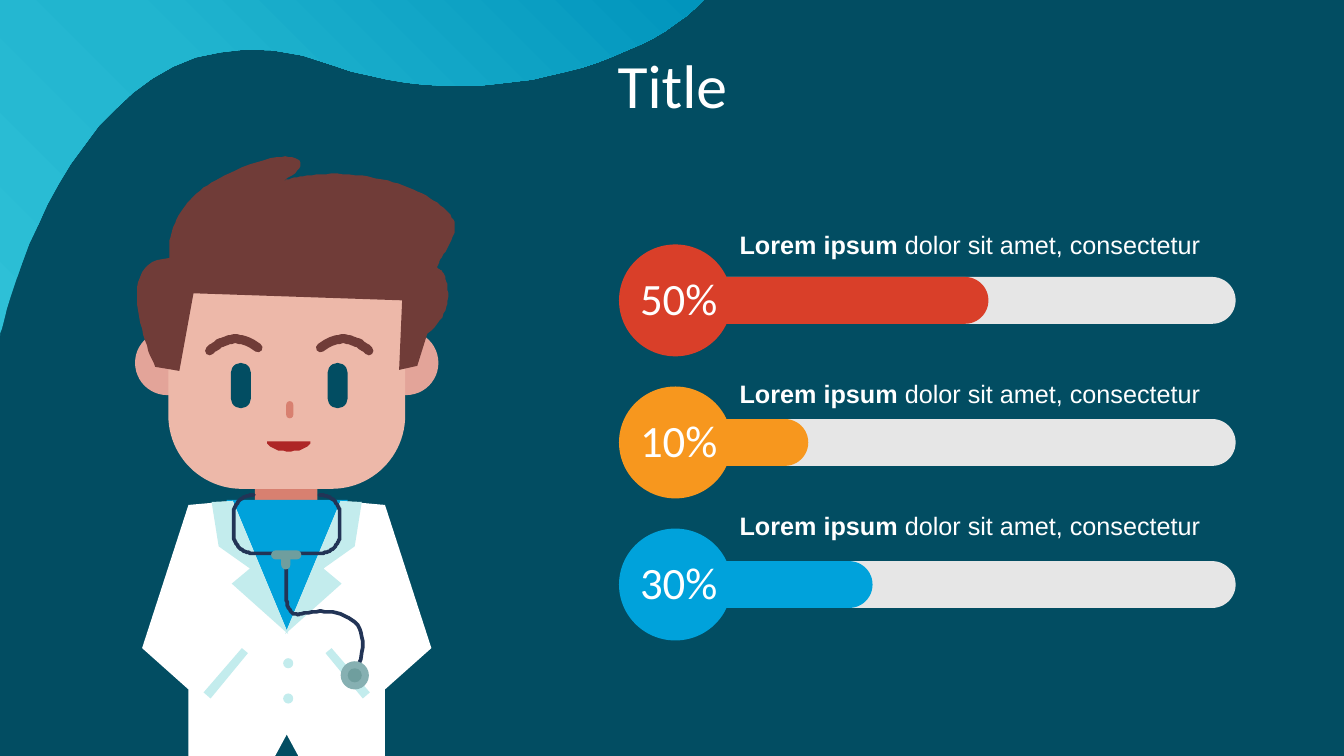
"""Build a slide with a doctor illustration beside three labelled progress bars."""
import copy
import dataclasses

import pptx
import pptx.dml.color
import pptx.enum.shapes
import pptx.enum.text
import pptx.oxml.ns
import pptx.util

Cm = pptx.util.Cm
Pt = pptx.util.Pt
Rgb = pptx.dml.color.RGBColor.from_string
Preset = pptx.enum.shapes.MSO_SHAPE


@dataclasses.dataclass(frozen=True)
class Theme:
    background: str = "024D62"
    wave: tuple = ((0, "2EC0D7"), (0.43, "21B5CF"), (1, "0195BD"))
    text: str = "FFFFFF"
    coat: str = "FFFFFF"
    lapel: str = "C3ECED"
    skin: str = "EDB8A9"
    ear: str = "E3A499"
    neck: str = "D88070"
    hair: str = "703C38"
    lip: str = "AE2626"
    tube: str = "223456"
    metal: str = "6F9E9E"
    disc: str = "86B0B2"
    track: str = "E6E6E6"
    red: str = "D93F29"
    orange: str = "F7971E"
    blue: str = "00A2DB"
    heading_font: str = "Calibri"
    caption_font: str = "Arial"
    title_size: int = 44
    percent_size: int = 32
    caption_size: int = 18
    brow_width: float = 6.5
    tube_width: float = 2.63


theme = Theme()
grid = Cm(2.54) / 100


def draw(shapes, kind, data, color, detail=None):
    """Draw a preset box, a closed outline or an open stroke; six-number steps are curves."""
    if kind in ("outline", "stroke"):
        points = [data[0]]
        for step in data[1:]:
            if len(step) == 2:
                points.append(step)
                continue
            corners = [points[-1], step[:2], step[2:4], step[4:]]
            for part in range(1, 25):
                t = part / 24
                weights = ((1 - t) ** 3, 3 * t * (1 - t) ** 2, 3 * t * t * (1 - t), t ** 3)
                points.append(tuple(sum(w * c[axis] for w, c in zip(weights, corners))
                                    for axis in (0, 1)))
        builder = shapes.build_freeform(*points[0], scale=grid)
        builder.add_line_segments(points[1:], close=kind == "outline")
        shape = builder.convert_to_shape()
    else:
        shape = shapes.add_shape(kind, *data)
        if detail is not None:
            shape.adjustments[0] = detail
    shape.shadow.inherit = False
    if kind == "stroke":
        shape.fill.background()
        shape.line.color.rgb = Rgb(color)
        shape.line.width = Pt(detail)
        shape._element.spPr.find(pptx.oxml.ns.qn("a:ln")).set("cap", "rnd")
    else:
        shape.fill.solid()
        shape.fill.fore_color.rgb = Rgb(color)
        shape.line.fill.background()
    return shape


def write(paragraph, text, font, size, bold=False):
    """Add one run of text to a paragraph."""
    run = paragraph.add_run()
    run.text = text
    run.font.name = font
    run.font.size = Pt(size)
    run.font.bold = bold
    run.font.color.rgb = Rgb(theme.text)


presentation = pptx.Presentation()
presentation.slide_width = Cm(33.87)
presentation.slide_height = Cm(19.05)
slide = presentation.slides.add_slide(presentation.slide_layouts[5])
slide.background.fill.solid()
slide.background.fill.fore_color.rgb = Rgb(theme.background)

title = slide.shapes.title
title.left, title.top, title.width, title.height = Cm(2.34), Cm(1.02), Cm(29.21), Cm(2.41)
title.text_frame.vertical_anchor = pptx.enum.text.MSO_ANCHOR.MIDDLE
paragraph = title.text_frame.paragraphs[0]
paragraph.alignment = pptx.enum.text.PP_ALIGN.CENTER
paragraph.line_spacing = 0.9
write(paragraph, "Title", theme.heading_font, theme.title_size)

wave_outline = [(0, 333), (0, 333, 77, -31, 331, 65), (472, 115, 639, 64, 698, 0), (0, 0)]
wave = draw(slide.shapes, "outline", wave_outline, theme.background)
wave.fill.gradient()
wave.fill.gradient_angle = 45
first_stop = wave._element.spPr.find(".//" + pptx.oxml.ns.qn("a:gs"))
first_stop.addnext(copy.deepcopy(first_stop))
for stop, (position, color) in zip(wave.fill.gradient_stops, theme.wave):
    stop.position = position
    stop.color.rgb = Rgb(color)
title._element.addprevious(wave._element)

rectangle, oval, rounded = Preset.RECTANGLE, Preset.OVAL, Preset.ROUNDED_RECTANGLE
face_axis, body_axis = 287, 284.5
doctor_parts = [
    (None, rectangle, (253, 485, 62, 12), theme.neck),
    (None, rectangle, (225, 496, 120, 140), theme.blue),
    (body_axis, oval, (134, 328, 64, 64), theme.ear),
    (None, rounded, (167, 211, 235, 274), theme.skin, 0.31),
    (None, "outline", [(192, 291), (178, 368), (154, 364), (143, 342, 113, 257, 168, 256),
                       (165, 230, 180, 197, 214, 179), (290, 138, 319, 159, 282, 179),
                       (282, 179, 323, 165, 379, 178), (424, 188, 456, 213, 451, 229),
                       (448, 246, 428, 266, 436, 267), (443, 270, 456, 307, 424, 331),
                       (414, 363), (396, 367), (399, 298)], theme.hair),
    (face_axis, rounded, (229, 360, 20, 45), theme.background, 0.5),
    (face_axis, "stroke", [(208, 348), (208, 348, 230, 324, 256, 345)], theme.hair,
     theme.brow_width),
    (None, rounded, (284, 398, 7, 17), theme.neck, 0.5),
    (None, "outline", [(265, 438), (265, 451, 308, 451, 308, 438)], theme.lip),
    (body_axis, "outline", [(231, 497), (286, 629), (286, 726), (273, 750), (187, 750),
                            (187, 684), (141, 643), (187, 501)], theme.coat),
    (body_axis, "outline", [(246, 648), (209, 693), (202, 687), (240, 643)], theme.lapel),
    (body_axis, "outline", [(210, 498), (217, 542), (248, 564), (230, 579), (286, 629),
                            (231, 497)], theme.lapel),
    *[(None, oval, (281, top, 10, 10), theme.lapel) for top in (653, 688)],
    (body_axis, "stroke", [(252, 491), (242, 491, 232, 499, 232, 509), (232, 531),
                           (232, 541, 242, 549, 252, 549), (285, 549)],
     theme.tube, theme.tube_width),
    (None, "stroke", [(284, 549), (284, 592), (284, 592, 284, 613, 299, 609),
                      (324, 602, 381, 606, 352, 668)], theme.tube, theme.tube_width),
    (None, oval, (338, 656, 28, 28), theme.disc),
    (None, oval, (345, 663, 14, 14), theme.metal),
    (None, rounded, (269, 546, 30, 9), theme.metal, 0.5),
    (None, rounded, (279, 549, 9, 16), theme.metal, 0.5),
]
doctor = slide.shapes.add_group_shape()
for axis, kind, data, *style in doctor_parts:
    freehand = kind in ("outline", "stroke")
    sides = [data]
    if axis and freehand:
        sides.append([tuple(value if index % 2 else 2 * axis - value
                            for index, value in enumerate(step)) for step in data])
    elif axis:
        left, top, width, height = data
        sides.append((2 * axis - left - width, top, width, height))
    for side in sides:
        if not freehand:
            side = [Cm(2.54 * length / 100) for length in side]
        draw(doctor.shapes, kind, side, *style)

progress_rows = [
    ("50%", theme.red, 7.26, 5.66),
    ("10%", theme.orange, 2.72, 9.4),
    ("30%", theme.blue, 4.34, 12.73),
]
bars = slide.shapes.add_group_shape()
for row, (percent, color, length, caption_top) in enumerate(progress_rows):
    offset = 3.58 * row
    for width, shade in ((13.49, theme.track), (length, color)):
        box = (Cm(17.65), Cm(6.98 + offset), Cm(width), Cm(1.18))
        draw(bars.shapes, rounded, box, shade, 0.5)
    draw(bars.shapes, oval, (Cm(15.6), Cm(6.16 + offset), Cm(2.84), Cm(2.82)), color)

    label = slide.shapes.add_textbox(Cm(15.88), Cm(6.7 + offset), Cm(2.54), Cm(1.63))
    label.text_frame.word_wrap = True
    write(label.text_frame.paragraphs[0], percent, theme.heading_font, theme.percent_size)

    caption = slide.shapes.add_textbox(Cm(18.39), Cm(caption_top), Cm(12.42), Cm(1.02))
    caption.text_frame.word_wrap = True
    paragraph = caption.text_frame.paragraphs[0]
    write(paragraph, "Lorem ipsum ", theme.caption_font, theme.caption_size, bold=True)
    write(paragraph, "dolor sit amet, consectetur", theme.caption_font, theme.caption_size)

presentation.save("out.pptx")
